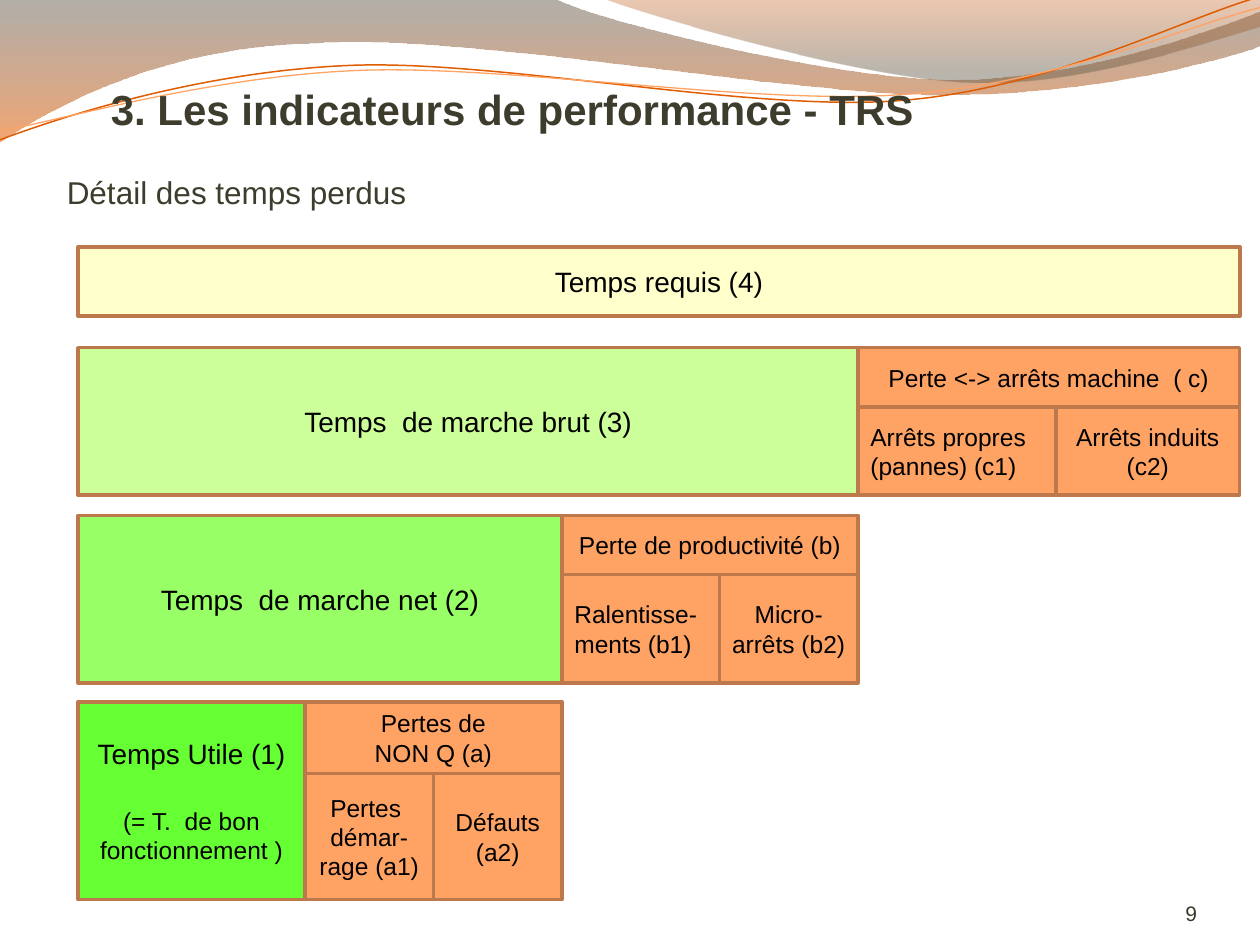
from dataclasses import dataclass
from typing import Any

from lxml import etree
from pptx import Presentation
from pptx.dml.color import RGBColor
from pptx.enum.shapes import MSO_SHAPE
from pptx.enum.text import MSO_ANCHOR, PP_ALIGN
from pptx.oxml.ns import qn
from pptx.util import Inches, Pt

RECTANGLE = MSO_SHAPE.RECTANGLE
LEFT, CENTER, RIGHT = PP_ALIGN.LEFT, PP_ALIGN.CENTER, PP_ALIGN.RIGHT
MIDDLE, BOTTOM = MSO_ANCHOR.MIDDLE, MSO_ANCHOR.BOTTOM
TITLE_ONLY = 5

DARK = "3E3D2D"
LOSS = "FFA365"
ROW_LEFT = 0.62

BANDS = [
    ([(0, 0), (4.4, -0.01),
      (4.76, 0.17, 6.64, 0.63, 7.58, 0.63), (8.53, 0.63, 9.58, 0.26, 10, 0.09),
      (10.01, 0.36),
      (9.83, 0.44, 8.7, 0.76, 7.46, 0.75), (6.22, 0.75, 3.82, 0.28, 2.57, 0.34),
      (1.29, 0.36, 0.46, 0.83, -0.01, 1.13), (0, 0)],
     [(0, "554D41", 45), (1, "E75D00", 55)]),
    ([(4.79, -0.01),
      (5.09, 0.11, 6.82, 0.62, 7.69, 0.65), (8.56, 0.69, 9.61, 0.32, 10, 0.21),
      (10, 0), (4.79, -0.01)],
     [(0, "BD4C00", 30), (0.8, "685D4B", 45)]),
]

WAVES = [
    ([(0, 1.11),
      (0.48, 0.93, 1.58, 0.57, 2.77, 0.52), (3.95, 0.47, 5.93, 0.89, 7.13, 0.8),
      (8.33, 0.71, 9.38, 0.15, 9.98, -0.02)],
     "E15B00", 0.85),
    ([(0, 1.04),
      (0.47, 0.96, 1.64, 0.61, 2.83, 0.56), (4.03, 0.51, 5.97, 0.84, 7.17, 0.75),
      (8.36, 0.67, 9.41, 0.21, 10, 0.06)],
     LOSS, 0.75),
]

TIME_ROWS = [
    dict(top=2.76, header=0.47, detail=0.7, split=6.81, middle=8.38, right=9.84,
         fill="CCFF99", useful="Temps  de marche brut (3)",
         loss="Perte <-> arrêts machine  ( c)",
         causes=[("Arrêts propres  (pannes) (c1)", LEFT),
                 ("Arrêts induits (c2)", CENTER)]),
    dict(top=4.09, header=0.47, detail=0.86, split=4.46, middle=5.71, right=6.81,
         fill="99FF66", useful="Temps  de marche net (2)",
         loss="Perte de productivité (b)",
         causes=[("Ralentisse-ments (b1)", LEFT), ("Micro-arrêts (b2)", CENTER)]),
    dict(top=5.57, header=0.57, detail=1, split=2.42, middle=3.44, right=4.46,
         fill="66FF33", useful="Temps Utile (1)",
         note="(= T.  de bon fonctionnement )",
         loss="Pertes de\nNON Q (a)",
         causes=[("Pertes  démar-rage (a1)", CENTER), ("Défauts (a2)", CENTER)]),
]


def rgb(value):
    return RGBColor.from_string(value)


def write(frame, text, size=14, color="000000", align=CENTER, anchor=MIDDLE,
          bold=False, font="Arial", wrap=True, insets=(0.1, 0.05, 0.1, 0.05),
          note=None, note_size=14, note_gap=20):
    frame.word_wrap = wrap
    frame.vertical_anchor = anchor
    (frame.margin_left, frame.margin_top,
     frame.margin_right, frame.margin_bottom) = map(Inches, insets)
    frame.text = text
    if note:
        detail = frame.add_paragraph()
        detail.text = note
        detail.space_before = Pt(note_gap)
    for paragraph in frame.paragraphs:
        paragraph.alignment = align
        for run in paragraph.runs:
            run.font.name = font
            run.font.size = Pt(note_size if run.text == note else size)
            run.font.bold = bold
            run.font.color.rgb = rgb(color)


def bend(shape, segments):
    lines = iter(list(shape._element.iter(qn("a:lnTo"))))
    for segment in segments:
        first = next(lines)
        if len(segment) == 6:
            first.tag = qn("a:cubicBezTo")
            for _ in range(2):
                extra = next(lines)
                first.append(extra[0])
                extra.getparent().remove(extra)


@dataclass
class TimeSlide:
    slide: Any
    border: str = "BD794B"
    border_width: float = 2

    def outline(self, shapes, segments, close):
        points = [(Inches(segment[i]), Inches(segment[i + 1]))
                  for segment in segments for i in range(0, len(segment), 2)]
        builder = shapes.build_freeform(*points[0])
        builder.add_line_segments(points[1:], close=close)
        shape = builder.convert_to_shape()
        bend(shape, segments[1:])
        shape.shadow.inherit = False
        return shape

    def band(self, segments, stops):
        shape = self.outline(self.slide.shapes, segments, True)
        shape.fill.gradient()
        shape.fill.gradient_angle = 270
        for stop, (position, color, _) in zip(shape.fill.gradient_stops, stops):
            stop.position = position
            stop.color.rgb = rgb(color)
        colors = shape._element.spPr.iter(qn("a:srgbClr"))
        for node, (_, _, opacity) in zip(colors, stops):
            etree.SubElement(node, qn("a:alpha")).set("val", str(opacity * 1000))
        shape.line.fill.background()

    def wave(self, group, segments, color, width):
        shape = self.outline(group.shapes, segments, False)
        shape.fill.background()
        shape.line.color.rgb = rgb(color)
        shape.line.width = Pt(width)

    def title(self, text, box, **style):
        title = self.slide.shapes.title
        title.left, title.top, title.width, title.height = map(Inches, box)
        write(title.text_frame, text, **style)

    def label(self, text, box, **style):
        label = self.slide.shapes.add_textbox(*map(Inches, box))
        write(label.text_frame, text, **style)

    def block(self, group, text, box, fill, **style):
        block = group.shapes.add_shape(RECTANGLE, *map(Inches, box))
        block.shadow.inherit = False
        block.fill.solid()
        block.fill.fore_color.rgb = rgb(fill)
        block.line.color.rgb = rgb(self.border)
        block.line.width = Pt(self.border_width)
        write(block.text_frame, text, **style)

    def time_row(self, group, top, header, detail, split, middle, right,
                 fill, useful, loss, causes, note=None):
        self.block(group, loss, (split, top, right - split, header), LOSS)
        spans = [(split, middle), (middle, right)]
        for (cause, align), (start, end) in zip(causes, spans):
            self.block(group, cause, (start, top + header, end - start, detail), LOSS,
                       align=align)
        self.block(group, useful, (ROW_LEFT, top, split - ROW_LEFT, header + detail), fill,
                   size=16, note=note)


def main():
    deck = Presentation()
    deck.slide_width, deck.slide_height = Inches(10), Inches(7.5)
    page = TimeSlide(deck.slides.add_slide(deck.slide_layouts[TITLE_ONLY]))
    for band in BANDS:
        page.band(*band)
    waves = page.slide.shapes.add_group_shape()
    for wave in WAVES:
        page.wave(waves, *wave)
    page.title("Détail des temps perdus", (0.53, 1.11, 9.11, 0.56), size=18, color=DARK,
               align=LEFT, anchor=BOTTOM, insets=(0, 0.05, 0, 0))
    page.label("9", (8.67, 6.95, 0.83, 0.4), size=12, color="3B3A2B",
               align=RIGHT, anchor=BOTTOM, insets=(0, 0, 0, 0))
    times = page.slide.shapes.add_group_shape()
    page.block(times, "Temps requis (4)", (ROW_LEFT, 1.96, 9.22, 0.55), "FFFFCC", size=16)
    for row in TIME_ROWS:
        page.time_row(times, **row)
    page.label("3. Les indicateurs de performance - TRS", (0.8, 0.62, 6.6, 0.49), size=24,
               color=DARK, align=LEFT, bold=True, wrap=False,
               insets=(0.08, 0.04, 0.08, 0.04))
    deck.save("out.pptx")


if __name__ == "__main__":
    main()
